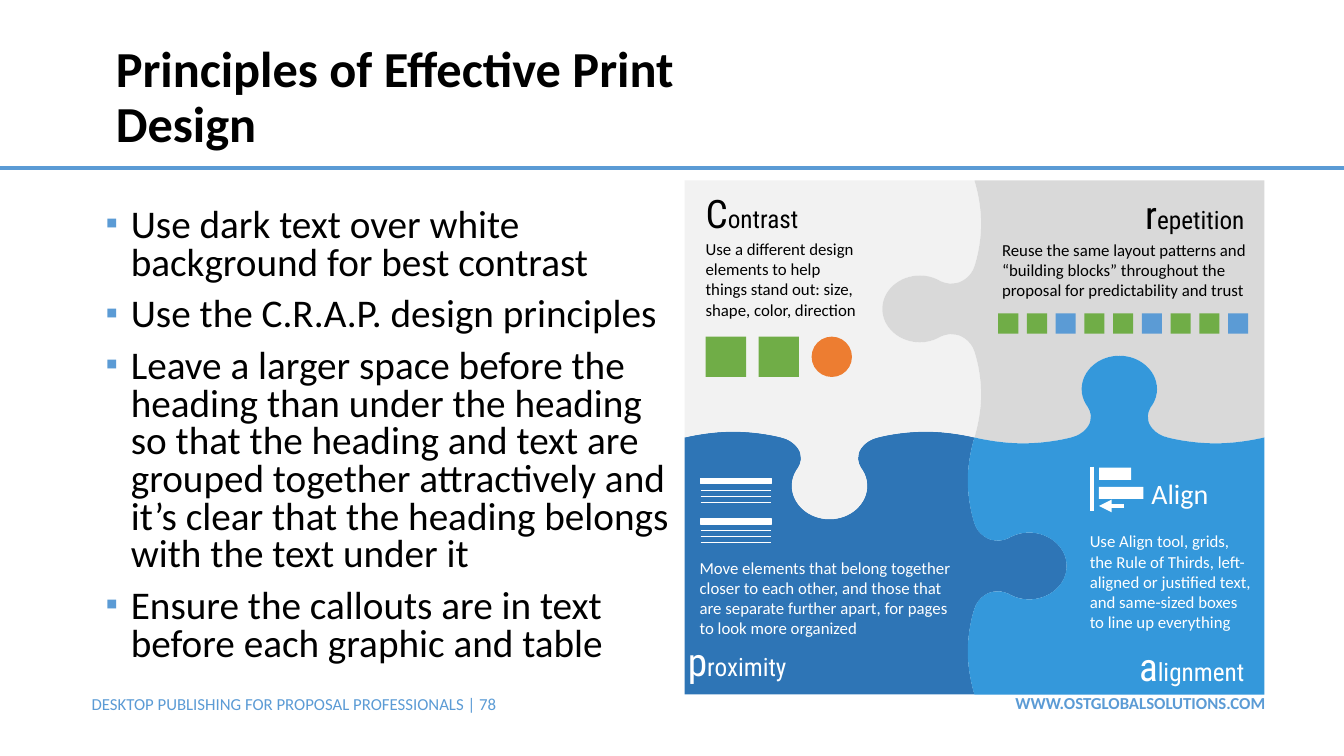
from lxml import etree
from pptx import Presentation
from pptx import util as u
from pptx.dml.color import RGBColor
from pptx.enum import shapes, text
from pptx.oxml.ns import qn

BLACK, WHITE, BLUE, GREEN, ORANGE = "000000", "FFFFFF", "5B9BD5", "70AD47", "ED7D31"
HEADING_FONT = "Roboto Condensed"

TITLE = "Principles of Effective Print Design"
BULLETS = [
    "Use dark text over white background for best contrast",
    "Use the C.R.A.P. design principles",
    "Leave a larger space before the heading than under the heading so that the heading "
    "and text are grouped together attractively and it’s clear that the heading belongs "
    "with the text under it",
    "Ensure the callouts are in text before each graphic and table",
]
WEBSITE = "WWW.OSTGLOBALSOLUTIONS.COM"
FOOTER = "DESKTOP PUBLISHING FOR PROPOSAL PROFESSIONALS | 78"
# initial, rest, box, colour, alignment
HEADINGS = [
    ("C", "ontrast", (6.9, 1.83, 1.85, 0.57), BLACK, "LEFT"),
    ("r", "epetition", (11.26, 1.84, 1.85, 0.57), BLACK, "LEFT"),
    ("a", "lignment", (10.59, 6.32, 1.85, 0.57), WHITE, "RIGHT"),
    ("p", "roximity", (6.05, 6.27, 1.85, 0.57), WHITE, "RIGHT"),
]
# wording, box, colour, size
NOTES = [
    ("Reuse the same layout patterns and “building blocks” throughout the proposal "
     "for predictability and trust", (9.84, 2.33, 2.68, 0.71), BLACK, 12),
    ("Use a different design elements to help things stand out: size, shape, color, "
     "direction", (6.9, 2.32, 1.74, 0.91), BLACK, 12),
    ("Use Align tool, grids, the Rule of Thirds, left-aligned or justified text, and "
     "same-sized boxes to line up everything", (10.71, 5.22, 1.82, 1.11), WHITE, 12),
    ("Move elements that belong together closer to each other, and those that are "
     "separate further apart, for pages to look more organized",
     (6.84, 5.48, 2.75, 0.91), WHITE, 12),
    ("Align", (11.32, 4.68, 0.85, 0.44), WHITE, 20),
]

# Puzzle: two by two cells
LEFT, TOP, CELL_W, CELL_H = 6.79, 1.79, 2.875, 2.55
MIDDLE_X, MIDDLE_Y = LEFT + CELL_W, TOP + CELL_H
RIGHT, BOTTOM = LEFT + 2 * CELL_W, TOP + 2 * CELL_H
# First half of a piece's edge as Bezier points, in shares of a cell: along, depth
HALF_EDGE = [
    (0, 0), (0, 0), (0.08, -0.023), (0.167, -0.023),
    (0.26, -0.023), (0.334, 0), (0.334, 0),
    (0.379, 0.012), (0.4, 0.051), (0.4, 0.067),
    (0.407, 0.09), (0.393, 0.118), (0.386, 0.127),
    (0.376, 0.145), (0.37, 0.165), (0.37, 0.188),
    (0.37, 0.259), (0.428, 0.318), (0.5, 0.318),
]
EDGE = HALF_EDGE + [(1 - along, depth) for along, depth in HALF_EDGE[-2::-1]]

presentation = Presentation()
presentation.slide_width, presentation.slide_height = u.Inches(13.33), u.Inches(7.5)
slide = presentation.slides.add_slide(presentation.slide_layouts[6])


def rgb(color):
    return RGBColor.from_string(color)


def inches(values):
    return tuple(u.Inches(value) for value in values)


def set_font(font, size=12, name="Calibri", color=BLACK, bold=False):
    font.color.rgb = rgb(color)
    for attribute, value in {"size": u.Pt(size), "name": name, "bold": bold}.items():
        setattr(font, attribute, value)


def add_text(box, paragraphs, align="LEFT", grow=True, anchor="TOP", spacing=None):
    """Each paragraph is a list of (wording, font format) runs."""
    frame = slide.shapes.add_textbox(*inches(box)).text_frame
    fit = text.MSO_AUTO_SIZE.SHAPE_TO_FIT_TEXT if grow else text.MSO_AUTO_SIZE.NONE
    settings = {"word_wrap": True, "auto_size": fit,
                "vertical_anchor": text.MSO_ANCHOR[anchor]}
    for attribute, value in settings.items():
        setattr(frame, attribute, value)
    for index, runs in enumerate(paragraphs):
        paragraph = frame.add_paragraph() if index else frame.paragraphs[0]
        paragraph.alignment = text.PP_ALIGN[align]
        paragraph.line_spacing = spacing
        for wording, font_format in runs:
            run = paragraph.add_run()
            run.text = wording
            set_font(run.font, **font_format)
    return frame


def add_bullet(paragraph):
    properties = paragraph._p.get_or_add_pPr()
    properties.set("marL", str(u.Inches(0.25)))
    properties.set("indent", str(u.Inches(-0.25)))
    color = etree.SubElement(properties, qn("a:buClr"))
    etree.SubElement(color, qn("a:srgbClr"), val=BLUE)
    etree.SubElement(properties, qn("a:buSzPct"), val="90000")
    etree.SubElement(properties, qn("a:buFont"), typeface="Arial")
    etree.SubElement(properties, qn("a:buChar"), char="▪")


def paint(shape, color, outline=None):
    shape.shadow.inherit = False
    shape.fill.solid()
    shape.fill.fore_color.rgb = rgb(color)
    if outline:
        shape.line.color.rgb = rgb(color)
        shape.line.width = u.Pt(outline)
    else:
        shape.line.fill.background()


def add_block(box, color, kind="RECTANGLE", outline=None):
    paint(slide.shapes.add_shape(shapes.MSO_SHAPE[kind], *inches(box)), color, outline)


def add_line(start, end, color, width, arrow=False):
    line = slide.shapes.add_connector(shapes.MSO_CONNECTOR.STRAIGHT, *inches(start + end))
    line.line.color.rgb = rgb(color)
    line.line.width = u.Pt(width)
    if arrow:
        etree.SubElement(line.line._get_or_add_ln(), qn("a:tailEnd"), type="triangle")
    etree.SubElement(line._element.spPr, qn("a:effectLst"))


def add_piece(group, parts, color):
    """Join corners (one point) and edges (Bezier points) into one closed outline."""
    parts = [[inches(point) for point in part] for part in parts]
    start = current = parts[0][0]
    segments = []
    for part in parts:
        if part[0] != current:
            segments.append(part[:1])
        segments += [part[i:i + 3] for i in range(1, len(part), 3)]
        current = part[-1]
    builder = group.shapes.build_freeform(*start)
    builder.add_line_segments([segment[-1] for segment in segments], close=True)
    piece = builder.convert_to_shape()
    outline = next(piece._element.iter(qn("a:path")))
    for straight, segment in zip(outline.findall(qn("a:lnTo")), segments):
        if len(segment) == 3:
            curve = etree.Element(qn("a:cubicBezTo"))
            for x, y in segment:
                etree.SubElement(curve, qn("a:pt"),
                                 x=str(x - piece.left), y=str(y - piece.top))
            outline.replace(straight, curve)
    paint(piece, color)


def add_puzzle():
    def across(column, side):
        return [(LEFT + (column + a) * CELL_W, MIDDLE_Y + side * d * CELL_H)
                for a, d in EDGE]

    def down(row, side):
        return [(MIDDLE_X + side * d * CELL_W, TOP + (row + a) * CELL_H)
                for a, d in EDGE]

    left, right = across(0, 1), across(1, -1)
    upper, lower = down(0, -1), down(1, 1)
    group = slide.shapes.add_group_shape()
    for parts, color in [
        ([left, lower, [(LEFT, BOTTOM)]], "2E75B6"),
        ([[(LEFT, TOP)], upper, left[::-1]], "F2F2F2"),
        ([upper, right, [(RIGHT, TOP)]], "D9D9D9"),
        ([right, [(RIGHT, BOTTOM)], lower[::-1]], "3498DB"),
    ]:
        add_piece(group, parts, color)


def add_icons():
    for index, (kind, color) in enumerate(
            [("RECTANGLE", GREEN), ("RECTANGLE", GREEN), ("OVAL", ORANGE)]):
        add_block((7 + index * 0.525, 3.34, 0.4, 0.4), color, kind)
    for index, color in enumerate([GREEN, GREEN, BLUE] * 3):
        add_block((9.9 + index * 0.285, 3.11, 0.2, 0.2), color)
    for top in (4.75, 5.15):
        add_block((6.95, top, 0.7, 0.05), WHITE, outline=1)
        for row in range(3):
            y = top + 0.11 + row * 0.06
            add_line((6.95, y), (7.65, y), WHITE, 0.5)
    add_line((10.83, 4.63), (10.83, 5.07), WHITE, 3)
    add_block((10.9, 4.64, 0.32, 0.12), WHITE)
    add_block((10.9, 4.83, 0.44, 0.12), WHITE)
    add_line((11.15, 5.02), (10.9, 5.02), WHITE, 3, arrow=True)


add_line((0, 1.67), (13.33, 1.67), BLUE, 3)
add_text((8.56, 6.82, 4.09, 0.3), [[(WEBSITE, {"color": BLUE, "bold": True})]], "RIGHT")
add_text((0.81, 6.83, 4.82, 0.3), [[(FOOTER, {"color": BLUE})]])
add_text((1.05, 0.41, 7.2, 1.14), [[(TITLE, {"size": 36, "bold": True})]],
         grow=False, anchor="MIDDLE", spacing=0.9)
body = add_text((0.95, 2.02, 5.8, 4.76), [[(bullet, {"size": 28})] for bullet in BULLETS],
                grow=False, spacing=0.8)
for position, item in enumerate(body.paragraphs):
    item.space_before = u.Pt(10 if position else 0)
    add_bullet(item)
add_puzzle()
for initial, rest, box, color, align in HEADINGS:
    style = {"name": HEADING_FONT, "color": color}
    add_text(box, [[(initial, {"size": 28, **style}), (rest, {"size": 18, **style})]], align)
for wording, box, color, size in NOTES:
    add_text(box, [[(wording, {"size": size, "color": color})]])
add_icons()

presentation.save("out.pptx")
